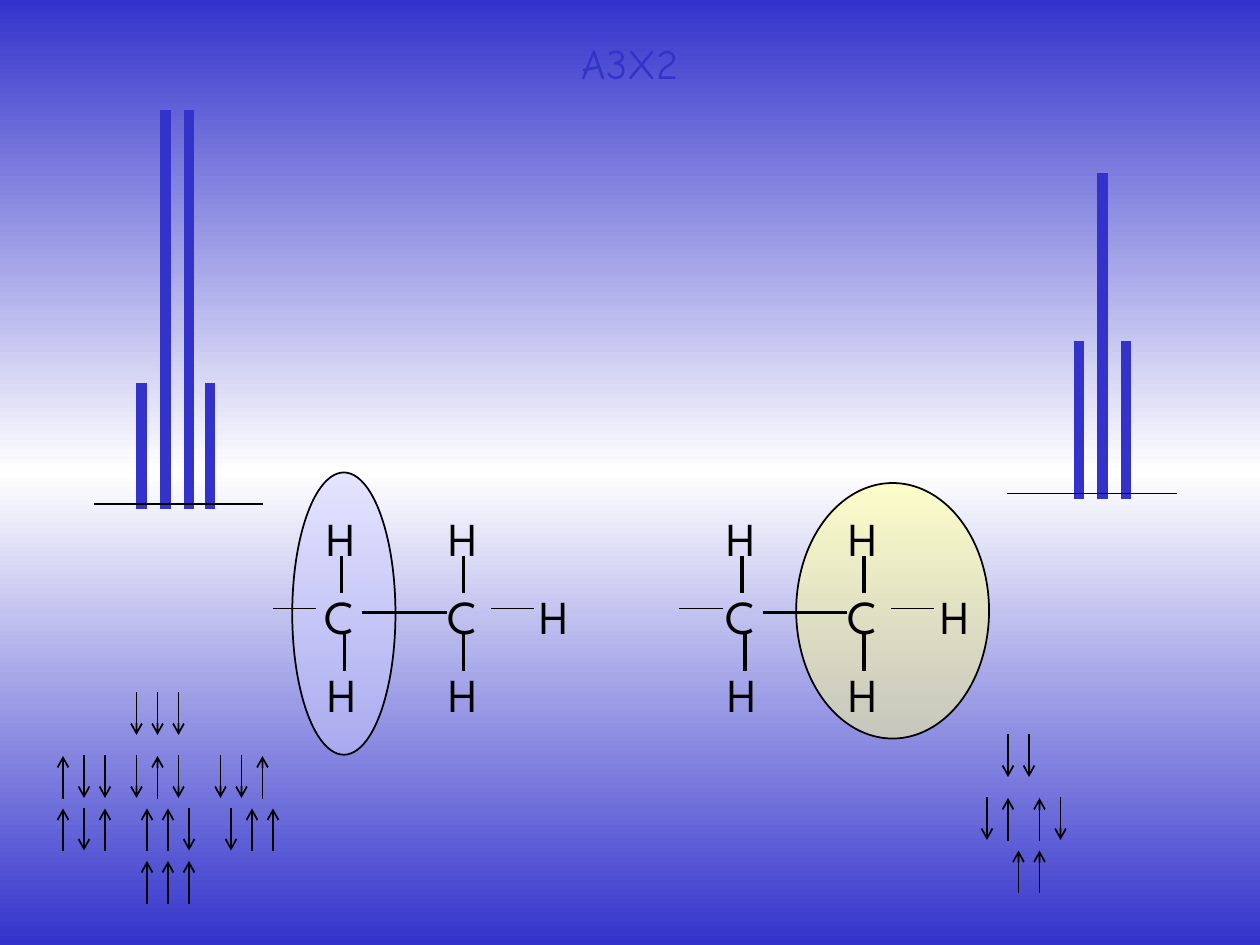
import copy
from dataclasses import dataclass

import pptx
import pptx.dml.color
import pptx.enum.shapes
import pptx.enum.text
import pptx.oxml
import pptx.oxml.ns
import pptx.util
from pptx.util import Pt


@dataclass(frozen=True)
class Theme:
    """Colours, fonts and sizes of the slide."""
    blue: str = "3333CC"
    white: str = "FFFFFF"
    black: str = "000000"
    title_fill: str = "B2B2B2"
    methylene: str = "CCCCFF"
    methyl: str = "FFFF99"
    title_font: str = "Comic Neue"
    atom_font: str = "League Spartan"
    title_size: float = 24
    atom_size: float = 27
    thin: float = 1
    bond: float = 2
    bar: float = 6


@dataclass(frozen=True)
class Molecule:
    left: float
    stub: float  # start of the open bond, relative to left
    highlight: tuple[float, float, float, float]
    highlight_color: str


@dataclass(frozen=True)
class SpinGroup:
    left: float
    top: float
    spins: str


@dataclass(frozen=True)
class Multiplet:
    axis_left: float
    base: float
    bars: tuple[tuple[float, float], ...]  # centre and top of each bar


THEME = Theme()
ATOM_TOP = 332
AXIS_LENGTH = 96
SPIN_STEP, SPIN_LENGTH = 12, 24

# Atoms and bonds relative to the first carbon's box
ATOMS = (
    ("C", 0, 0), ("C", 69.8, 0),
    ("H", 0.7, -44.6), ("H", 70.6, -44.6),
    ("H", 1.4, 44.6), ("H", 70.6, 44.6),
    ("H", 122.8, 0),
)
BONDS = (
    (29.5, 18, 75.6, 18),
    (16.6, 5.8, 16.6, -13), (86.4, 5.8, 86.4, -13),
    (18.4, 31, 18.4, 50.4), (86.4, 31, 86.4, 50.4),
)
STUB_TOP, STUB_LENGTH, RIGHT_STUB = 15.8, 24, 102.2

MOLECULES = (
    Molecule(178.6, -22.3, (167, 270, 59, 161.3), THEME.methylene),
    Molecule(407.3, -18.7, (455, 276, 110.2, 146), THEME.methyl),
)
METHYL_SPINS = (
    SpinGroup(78, 396, "↓↓↓"),
    SpinGroup(36, 432, "↑↓↓"), SpinGroup(78, 432, "↓↑↓"), SpinGroup(126, 432, "↓↓↑"),
    SpinGroup(36, 462, "↑↓↑"), SpinGroup(84, 462, "↑↑↓"), SpinGroup(132, 462, "↓↑↑"),
    SpinGroup(84, 492, "↑↑↑"),
)
METHYLENE_SPINS = (
    SpinGroup(576, 420, "↓↓"),
    SpinGroup(564, 456, "↓↑"), SpinGroup(594, 456, "↑↓"),
    SpinGroup(582, 486, "↑↑"),
)
MULTIPLETS = (
    Multiplet(54, 288, ((81, 222), (94.5, 66), (108, 66), (120, 222))),
    Multiplet(576, 282, ((616.5, 198), (630, 102), (643.5, 198))),
)


def rgb(color: str):
    return pptx.dml.color.RGBColor.from_string(color)


def make_half_transparent(element) -> None:
    color = element.find(".//" + pptx.oxml.ns.qn("a:srgbClr"))
    alpha = color.makeelement(pptx.oxml.ns.qn("a:alpha"), {"val": "50000"})
    color.append(alpha)


def write_text(shape, text: str, *, font: str, size: float, color: str,
               centered: bool = False, wrap: bool = False):
    frame = shape.text_frame
    frame.word_wrap = wrap
    frame.auto_size = pptx.enum.text.MSO_AUTO_SIZE.NONE
    frame.vertical_anchor = pptx.enum.text.MSO_ANCHOR.TOP
    paragraph = frame.paragraphs[0]
    align = pptx.enum.text.PP_ALIGN
    paragraph.alignment = align.CENTER if centered else align.LEFT
    run = paragraph.add_run()
    run.text = text
    run.font.name = font
    run.font.size = Pt(size)
    run.font.color.rgb = rgb(color)
    return run


def draw_line(shapes, x1: float, y1: float, x2: float, y2: float, *,
              width: float = THEME.thin, color: str = THEME.black,
              arrow: bool = False) -> None:
    connector = shapes.add_connector(
        pptx.enum.shapes.MSO_CONNECTOR.STRAIGHT, Pt(x1), Pt(y1), Pt(x2), Pt(y2))
    connector.line.width = Pt(width)
    connector.line.color.rgb = rgb(color)
    properties = connector.element.spPr
    line = properties.find(pptx.oxml.ns.qn("a:ln"))
    line.set("cap", "sq")
    if arrow:
        line.append(line.makeelement(pptx.oxml.ns.qn("a:tailEnd"), {"type": "arrow"}))
    properties.append(properties.makeelement(pptx.oxml.ns.qn("a:effectLst"), {}))


def draw_molecule(shapes, molecule: Molecule) -> None:
    oval = shapes.add_shape(pptx.enum.shapes.MSO_SHAPE.OVAL,
                            *(Pt(length) for length in molecule.highlight))
    oval.shadow.inherit = False
    oval.fill.solid()
    oval.fill.fore_color.rgb = rgb(molecule.highlight_color)
    make_half_transparent(oval.element.spPr)
    oval.line.color.rgb = rgb(THEME.black)
    oval.line.width = Pt(THEME.thin)

    for symbol, x, y in ATOMS:
        box = shapes.add_textbox(Pt(molecule.left + x), Pt(ATOM_TOP + y), Pt(34), Pt(39.6))
        write_text(box, symbol, font=THEME.atom_font, size=THEME.atom_size, color=THEME.black)
    for x1, y1, x2, y2 in BONDS:
        draw_line(shapes, molecule.left + x1, ATOM_TOP + y1,
                  molecule.left + x2, ATOM_TOP + y2, width=THEME.bond)
    for x in (RIGHT_STUB, molecule.stub):
        start, y = molecule.left + x, ATOM_TOP + STUB_TOP
        draw_line(shapes, start, y, start + STUB_LENGTH, y)


def draw_spins(shapes, group: SpinGroup) -> None:
    for index, spin in enumerate(group.spins):
        x = group.left + index * SPIN_STEP
        ends = (group.top, group.top + SPIN_LENGTH)
        start, end = ends if spin == "↓" else reversed(ends)
        draw_line(shapes, x, start, x, end, arrow=True)


def draw_multiplet(shapes, multiplet: Multiplet) -> None:
    for x, top in multiplet.bars:
        draw_line(shapes, x, top, x, multiplet.base, width=THEME.bar, color=THEME.blue)
    draw_line(shapes, multiplet.axis_left, multiplet.base,
              multiplet.axis_left + AXIS_LENGTH, multiplet.base)


def paint_background(slide) -> None:
    fill = slide.background.fill
    fill.gradient()
    fill.gradient_angle = 90
    stop_list = slide.element.find(".//" + pptx.oxml.ns.qn("a:gsLst"))
    stop_list.insert(1, copy.deepcopy(stop_list[0]))
    colors = (THEME.blue, THEME.white, THEME.blue)
    for stop, position, color in zip(fill.gradient_stops, (0, 0.5, 1), colors):
        stop.position = position
        stop.color.rgb = rgb(color)


def write_title(slide) -> None:
    title = slide.shapes.title
    title.left, title.top, title.width, title.height = Pt(225), Pt(18), Pt(270), Pt(54)
    run = write_text(title, "A3X2", font=THEME.title_font, size=THEME.title_size,
                     color=THEME.title_fill, centered=True, wrap=True)
    # Outlined, half transparent letters
    properties = run.font.fill and run.element.find(pptx.oxml.ns.qn("a:rPr")) if hasattr(
        run, "element") else title.element.find(".//" + pptx.oxml.ns.qn("a:rPr"))
    make_half_transparent(properties)
    properties.insert(0, pptx.oxml.parse_xml(
        f'<a:ln {pptx.oxml.ns.nsdecls("a")} w="12700"><a:solidFill>'
        f'<a:srgbClr val="{THEME.blue}"/></a:solidFill></a:ln>'))


def main() -> None:
    presentation = pptx.Presentation()
    presentation.slide_width, presentation.slide_height = Pt(720), Pt(540)
    slide = presentation.slides.add_slide(presentation.slide_layouts[5])
    paint_background(slide)
    write_title(slide)

    # Ethyl group, once for each highlighted part
    molecules = slide.shapes.add_group_shape().shapes
    for molecule in MOLECULES:
        draw_molecule(molecules, molecule)
    # Spin states of the neighbouring protons
    for spin_groups in (METHYLENE_SPINS, METHYL_SPINS):
        spins = slide.shapes.add_group_shape().shapes
        for group in spin_groups:
            draw_spins(spins, group)
    # Quartet and triplet
    for multiplet in MULTIPLETS:
        draw_multiplet(slide.shapes.add_group_shape().shapes, multiplet)

    presentation.save("out.pptx")


if __name__ == "__main__":
    main()
